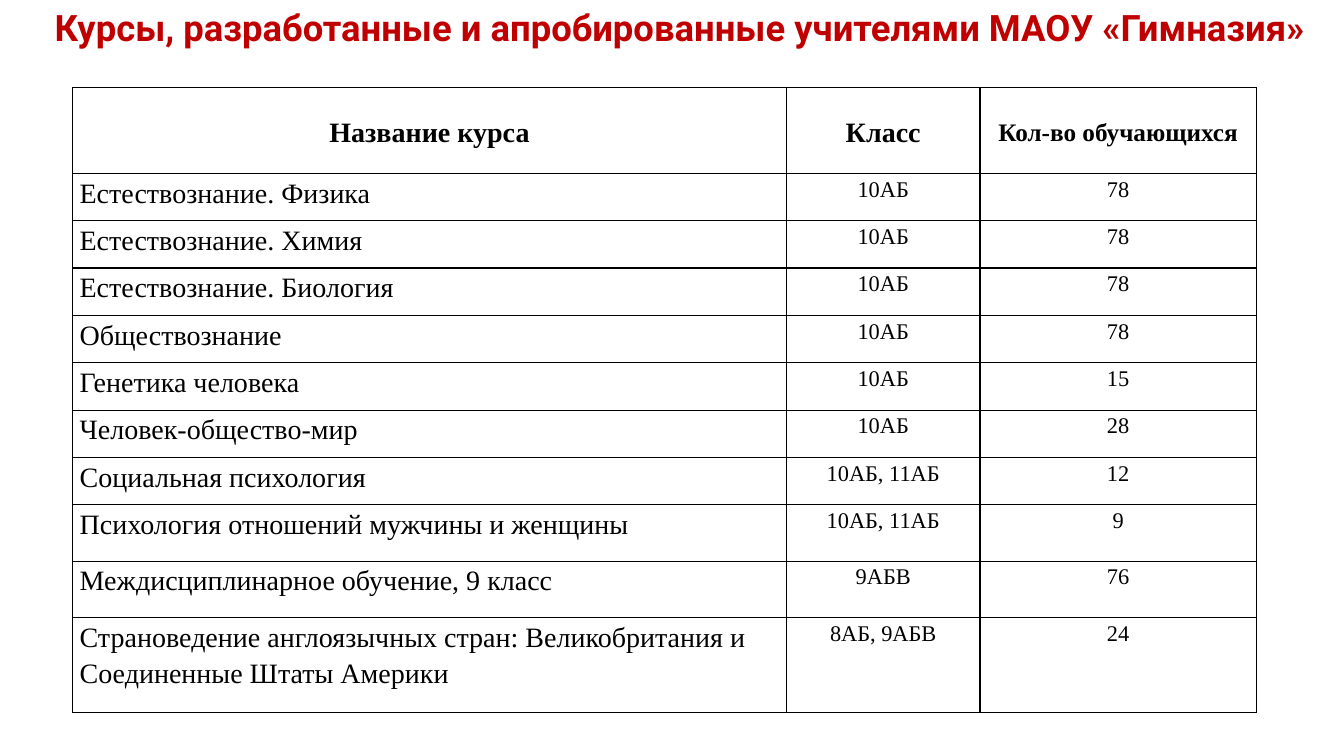
from dataclasses import dataclass

from lxml.etree import SubElement
from pptx import Presentation
from pptx.dml.color import RGBColor
from pptx.enum.text import MSO_ANCHOR as Anchor, MSO_AUTO_SIZE as AutoSize, PP_ALIGN as Align
from pptx.oxml.ns import qn
from pptx.slide import Slide
from pptx.table import _Cell as Cell
from pptx.util import Inches, Pt

RED = RGBColor(0xC0, 0x00, 0x00)
BLACK = RGBColor(0x00, 0x00, 0x00)
COLUMN_WIDTHS = (7.08, 1.92, 2.74)
COLUMN_NAMES = ("Название курса", "Класс", "Кол-во обучающихся")
HEADER_SIZES = (20, 20, 18)
COURSE_SIZES = (20, 16, 16)
HEADER_HEIGHT = 0.85


@dataclass(frozen=True)
class Course:
    name: str
    classes: str
    students: int
    height: float = 0.47


COURSES = (
    Course("Естествознание. Физика", "10АБ", 78),
    Course("Естествознание. Химия", "10АБ", 78),
    Course("Естествознание. Биология", "10АБ", 78),
    Course("Обществознание", "10АБ", 78),
    Course("Генетика человека", "10АБ", 15),
    Course("Человек-общество-мир", "10АБ", 28),
    Course("Социальная психология", "10АБ, 11АБ", 12),
    Course("Психология отношений мужчины и женщины", "10АБ, 11АБ", 9, 0.56),
    Course("Междисциплинарное обучение, 9 класс", "9АБВ", 76, 0.56),
    Course(
        "Страноведение англоязычных стран: Великобритания и Соединенные Штаты Америки",
        "8АБ, 9АБВ", 24, 0.94,
    ),
)


def add_borders(cell: Cell) -> None:
    properties = cell._tc.get_or_add_tcPr()
    for side in ("a:lnL", "a:lnR", "a:lnT", "a:lnB"):
        line = SubElement(properties, qn(side), w=str(Pt(1)))
        fill = SubElement(line, qn("a:solidFill"))
        SubElement(fill, qn("a:srgbClr"), val=str(BLACK))


def fill_cell(cell: Cell, text: str, size: int, align: Align, header: bool) -> None:
    cell.text = text
    cell.margin_left = cell.margin_right = Inches(0.07)
    cell.margin_top = cell.margin_bottom = 0
    cell.vertical_anchor = Anchor.MIDDLE if header else Anchor.TOP
    paragraph = cell.text_frame.paragraphs[0]
    paragraph.alignment = align
    paragraph.line_spacing = 1.15
    font = paragraph.font
    font.name, font.size, font.bold = "Times New Roman", Pt(size), header
    font.color.rgb = BLACK
    add_borders(cell)
    cell.fill.background()


def add_heading(slide: Slide) -> None:
    heading = slide.shapes.title
    heading.left, heading.top = Inches(-0.35), 0
    heading.width, heading.height = Inches(14.2), Inches(0.54)
    frame = heading.text_frame
    frame.text = "Курсы, разработанные и апробированные учителями МАОУ «Гимназия»"
    frame.word_wrap = True
    frame.auto_size = AutoSize.NONE
    frame.vertical_anchor = Anchor.TOP
    paragraph = frame.paragraphs[0]
    paragraph.alignment = Align.CENTER
    paragraph.line_spacing = 1.0
    font = paragraph.font
    font.name, font.size, font.bold = "Roboto", Pt(26), True
    font.color.rgb = RED


def add_courses(slide: Slide) -> None:
    heights = (HEADER_HEIGHT, *(course.height for course in COURSES))
    courses = slide.shapes.add_table(
        len(heights), len(COLUMN_WIDTHS), Inches(0.72), Inches(0.87),
        Inches(sum(COLUMN_WIDTHS)), Inches(sum(heights)),
    ).table
    courses.first_row = courses.horz_banding = False
    for column, width in zip(courses.columns, COLUMN_WIDTHS):
        column.width = Inches(width)
    for row, height in zip(courses.rows, heights):
        row.height = Inches(height)
    for index, (name, size) in enumerate(zip(COLUMN_NAMES, HEADER_SIZES)):
        fill_cell(courses.cell(0, index), name, size, Align.CENTER, True)
    for number, course in enumerate(COURSES, start=1):
        values = (course.name, course.classes, str(course.students))
        for index, (value, size) in enumerate(zip(values, COURSE_SIZES)):
            align = Align.CENTER if index else Align.LEFT
            fill_cell(courses.cell(number, index), value, size, align, False)


def main() -> None:
    deck = Presentation()
    deck.slide_width, deck.slide_height = Inches(13.33), Inches(7.5)
    slide = deck.slides.add_slide(deck.slide_layouts[5])
    add_heading(slide)
    add_courses(slide)
    deck.save("out.pptx")


if __name__ == "__main__":
    main()
